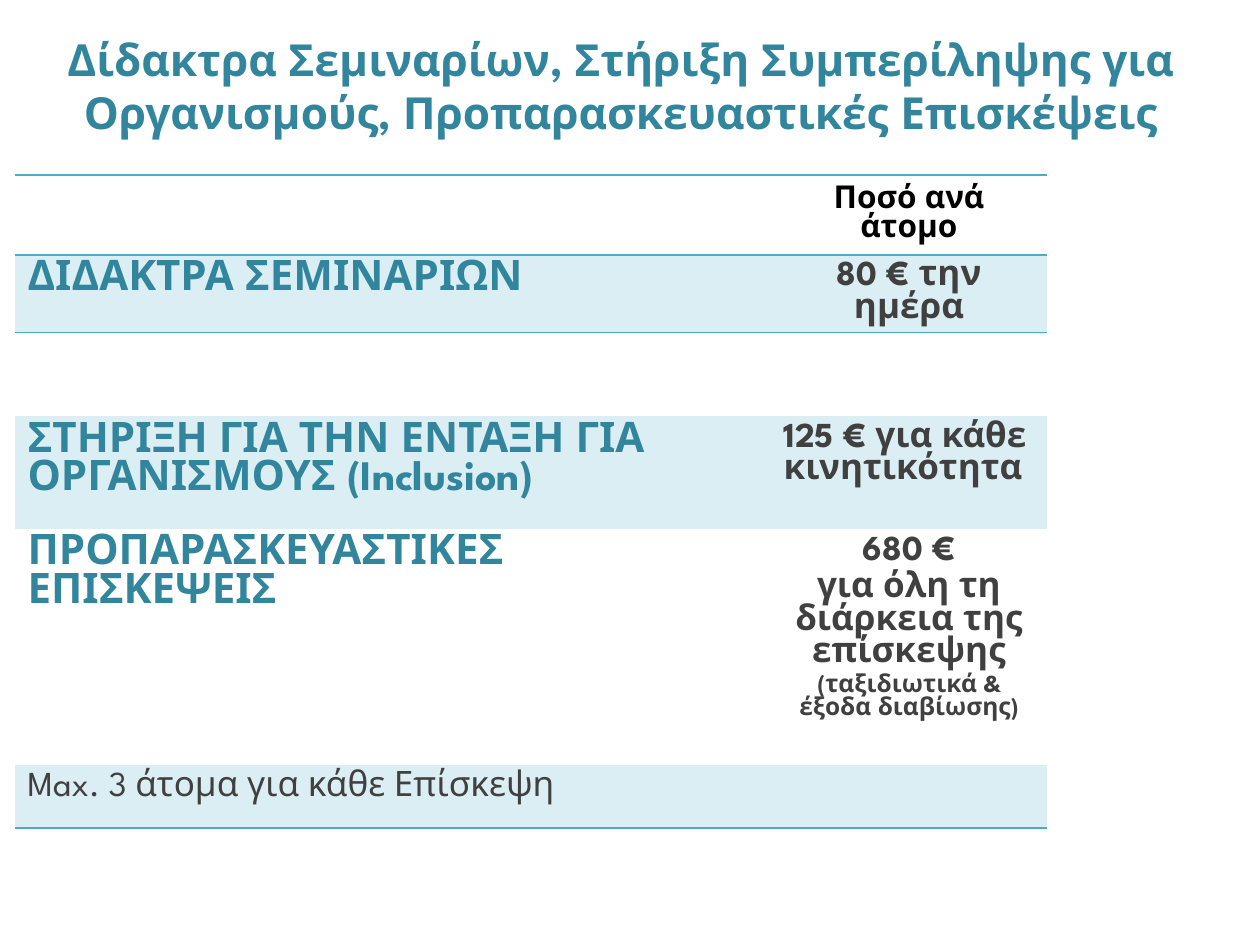
import pptx
import pptx.util
import pptx.dml.color
import pptx.enum.text
import pptx.oxml
import pptx.oxml.ns

PX = 914400 / 126
FONT = "League Spartan"
COLORS = {"teal": "31859C", "grey": "404040", "black": "000000",
          "line": "4BACC6", "band": "DBEEF4"}
PLAIN_STYLE = "{2D5ABB26-0587-4C30-8999-92F81FD0307C}"
LEFT = pptx.enum.text.PP_ALIGN.LEFT
CENTER = pptx.enum.text.PP_ALIGN.CENTER


def px(n):
    return pptx.util.Emu(round(n * PX))


def rgb(name):
    return pptx.dml.color.RGBColor.from_string(COLORS[name])


def write(p, text, size, color, bold=True, align=LEFT):
    p.text = text
    p.alignment = align
    p.font.name = FONT
    p.font.size = pptx.util.Pt(size)
    p.font.bold = bold
    p.font.color.rgb = rgb(color)


def border(cell, *sides):
    tcPr = cell._tc.get_or_add_tcPr()
    for i, side in enumerate(sides):
        tcPr.insert(i, pptx.oxml.parse_xml(
            f'<a:{side} {pptx.oxml.ns.nsdecls("a")} w="12700"><a:solidFill>'
            f'<a:srgbClr val="{COLORS["line"]}"/></a:solidFill></a:{side}>'))


def add_title(s, x, y, w, h, text):
    tf = s.shapes.add_textbox(px(x), px(y), px(w), px(h)).text_frame
    tf.word_wrap = True
    p = tf.paragraphs[0]
    write(p, text, 25.2, "teal", align=CENTER)
    p.line_spacing = pptx.util.Pt(30.3)


def add_rates_table(s, x, y, cols, heights, rows, banded):
    frame = s.shapes.add_table(len(rows), len(cols), px(x), px(y),
                               px(sum(cols)), px(sum(heights)))
    table = frame.table
    table.first_row = table.horz_banding = False
    frame._element.find(".//" + pptx.oxml.ns.qn("a:tableStyleId")).text = PLAIN_STYLE
    for col, w in zip(table.columns, cols):
        col.width = px(w)
    for r, (row, h) in enumerate(zip(rows, heights)):
        table.rows[r].height = px(h)
        for c, lines in enumerate(row):
            cell = table.cell(r, c)
            if r in banded:
                cell.fill.solid()
                cell.fill.fore_color.rgb = rgb("band")
            else:
                cell.fill.background()
            tf = cell.text_frame
            for i, line in enumerate(lines):
                p = tf.add_paragraph() if i else tf.paragraphs[0]
                write(p, *line)
                if i:
                    p.space_before = pptx.util.Pt(3)
    for c in range(len(cols)):
        border(table.cell(0, c), "lnT", "lnB")
        border(table.cell(1, c), "lnT")
        border(table.cell(len(rows) - 1, c), "lnB")
    table.cell(0, 1).vertical_anchor = pptx.enum.text.MSO_ANCHOR.MIDDLE
    table.cell(2, 0).merge(table.cell(2, 1))


def heading(text):
    return [(text, 24, "teal")]


def amount(text, size=20, align=CENTER):
    return (text, size, "grey", True, align)


def main():
    prs = pptx.Presentation()
    prs.slide_width, prs.slide_height = px(1260), px(945)
    s = prs.slides.add_slide(prs.slide_layouts[6])
    rows = [
        ([], [("Ποσό ανά άτομο", 18, "black", True, CENTER)]),
        (heading("ΔΙΔΑΚΤΡΑ ΣΕΜΙΝΑΡΙΩΝ"), [amount("80 € την ημέρα")]),
        ([], []),
        (heading("ΣΤΗΡΙΞΗ ΓΙΑ ΤΗΝ ΕΝΤΑΞΗ ΓΙΑ ΟΡΓΑΝΙΣΜΟΥΣ (Inclusion)"),
         [amount("125 € για κάθε κινητικότητα", align=LEFT)]),
        (heading("ΠΡΟΠΑΡΑΣΚΕΥΑΣΤΙΚΕΣ ΕΠΙΣΚΕΨΕΙΣ"),
         [amount("680 €"), amount("για όλη τη διάρκεια της επίσκεψης"),
          amount("(ταξιδιωτικά & έξοδα διαβίωσης)", 14)]),
        ([("Max. 3 άτομα για κάθε Επίσκεψη", 20, "grey", False)], []),
    ]
    add_rates_table(s, 15, 175, [756, 276], [80, 77, 84, 113, 236, 63],
                    rows, {1, 3, 5})
    add_title(s, 54, 26, 1134, 87,
              "Δίδακτρα Σεμιναρίων, Στήριξη Συμπερίληψης για Οργανισμούς, "
              "Προπαρασκευαστικές Επισκέψεις")
    prs.save("out.pptx")


if __name__ == "__main__":
    main()
